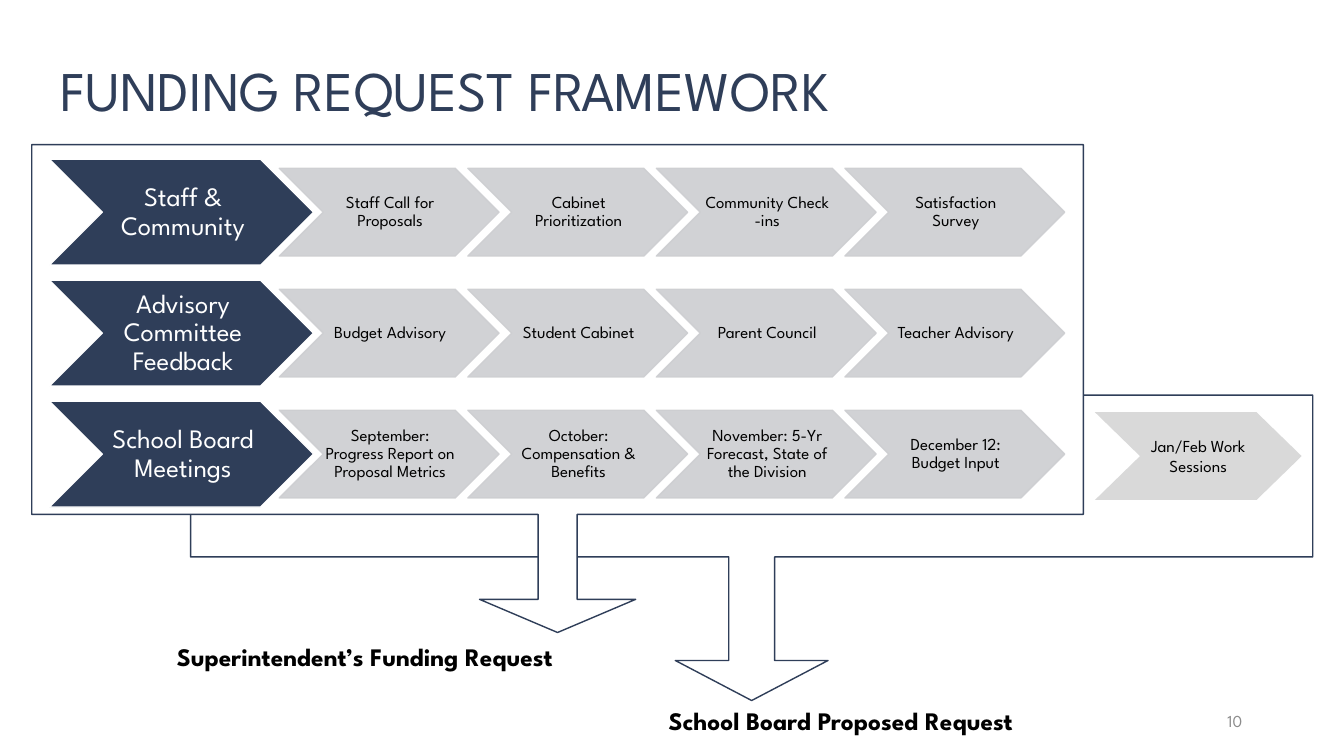
"""Build the funding request framework slide."""
import lxml.etree
import pptx
import pptx.dml.color
import pptx.enum.shapes
import pptx.enum.text
import pptx.oxml.ns
import pptx.util

Inches = pptx.util.Inches
Pt = pptx.util.Pt
SHAPES = pptx.enum.shapes.MSO_SHAPE
ALIGN = pptx.enum.text.PP_ALIGN
ANCHOR = pptx.enum.text.MSO_ANCHOR
FONT = "League Spartan"
COLORS = {
    "navy": "2F3E59",
    "white": "FFFFFF",
    "step": "CDCED1",
    "session": "D9D9D9",
    "black": "000000",
    "number": "8C8C8C",
}


def add_shape(kind, box, fill=None, line=None, adjustments=(), alpha=None):
    shape = slide.shapes.add_shape(kind, *map(Inches, box))
    shape.shadow.inherit = False
    for index, value in enumerate(adjustments):
        shape.adjustments[index] = value
    for target, color in ((shape.fill, fill), (shape.line.fill, line)):
        if color:
            target.solid()
            target.fore_color.rgb = pptx.dml.color.RGBColor.from_string(COLORS[color])
        else:
            target.background()
    if line:
        shape.line.width = Pt(1)
    if alpha:
        for color_element in shape.element.spPr.iter(pptx.oxml.ns.qn("a:srgbClr")):
            opacity = lxml.etree.SubElement(color_element, pptx.oxml.ns.qn("a:alpha"))
            opacity.set("val", str(alpha * 1000))
    return shape


def write_text(shape, text, size, color, bold=False, align=ALIGN.CENTER,
               anchor=ANCHOR.MIDDLE, spacing=None, margins=None):
    frame = shape.text_frame
    frame.word_wrap = True
    frame.vertical_anchor = anchor
    for side, margin in (margins or {}).items():
        setattr(frame, f"margin_{side}", Inches(margin))
    paragraph = frame.paragraphs[0]
    paragraph.alignment = align
    paragraph.line_spacing = spacing
    run = paragraph.add_run()
    run.text = text
    for name, value in {"name": FONT, "size": Pt(size), "bold": bold}.items():
        setattr(run.font, name, value)
    run.font.color.rgb = pptx.dml.color.RGBColor.from_string(COLORS[color])


presentation = pptx.Presentation()
presentation.slide_width = Inches(13.33)
presentation.slide_height = Inches(7.5)
slide = presentation.slides.add_slide(presentation.slide_layouts[6])

callouts = [
    ((5.94, -0.13, 3.03, 11.13), None, (0.15, 0.25, 0.131, 0.53)),
    ((3.11, -1.36, 4.84, 10.43), "white", (0.08, 0.16, 0.068, 0.758)),
]
for box, fill, adjustments in callouts:
    callout = add_shape(SHAPES.RIGHT_ARROW_CALLOUT, box, fill, "navy", adjustments)
    callout.rotation = 90

tracks = {
    "Staff & Community": [
        "Staff Call for Proposals", "Cabinet Prioritization",
        "Community Check -ins", "Satisfaction Survey"],
    "Advisory Committee Feedback": [
        "Budget Advisory", "Student Cabinet", "Parent Council", "Teacher Advisory"],
    "School Board Meetings": [
        "September: Progress Report on Proposal Metrics",
        "October: Compensation & Benefits",
        "November: 5-Yr Forecast, State of the Division",
        "December 12: Budget Input"],
}
margins = {"left": 0.02, "right": 0, "top": 0.01, "bottom": 0.01}
for row, (track, steps) in enumerate(tracks.items()):
    top = 1.58 + 1.2 * row
    header = add_shape(SHAPES.CHEVRON, (0.49, top, 2.62, 1.05), "navy", "white")
    write_text(header, track, 19, "white", spacing=0.9, margins={**margins, "left": 0.03})
    for column, step in enumerate(steps):
        box = (2.77 + 1.87 * column, top + 0.09, 2.18, 0.87)
        chevron = add_shape(SHAPES.CHEVRON, box, "step", "step", alpha=90)
        write_text(chevron, step, 12, "black", spacing=0.9, margins=margins)

sessions = add_shape(SHAPES.CHEVRON, (10.86, 4.09, 2.05, 0.87), "session", adjustments=(0.514,))
write_text(sessions, "Jan/Feb Work Sessions", 12, "black")

title = slide.shapes.add_textbox(Inches(0.5), Inches(0.5), Inches(12.33), Inches(1.2))
write_text(title, "FUNDING REQUEST FRAMEWORK", 40, "navy", align=ALIGN.LEFT, anchor=ANCHOR.TOP)

outcomes = [
    ("Superintendent’s Funding Request", 0.57, 6.31),
    ("School Board Proposed Request", 5.29, 6.95),
]
for outcome, left, top in outcomes:
    label = slide.shapes.add_textbox(Inches(left), Inches(top), Inches(6.1), Inches(0.4))
    write_text(label, outcome, 18, "black", bold=True, anchor=ANCHOR.TOP)
    label.text_frame.auto_size = pptx.enum.text.MSO_AUTO_SIZE.SHAPE_TO_FIT_TEXT

page_number = slide.shapes.add_textbox(Inches(9.42), Inches(6.95), Inches(3), Inches(0.4))
write_text(page_number, "10", 12, "number", align=ALIGN.RIGHT)

presentation.save("out.pptx")
